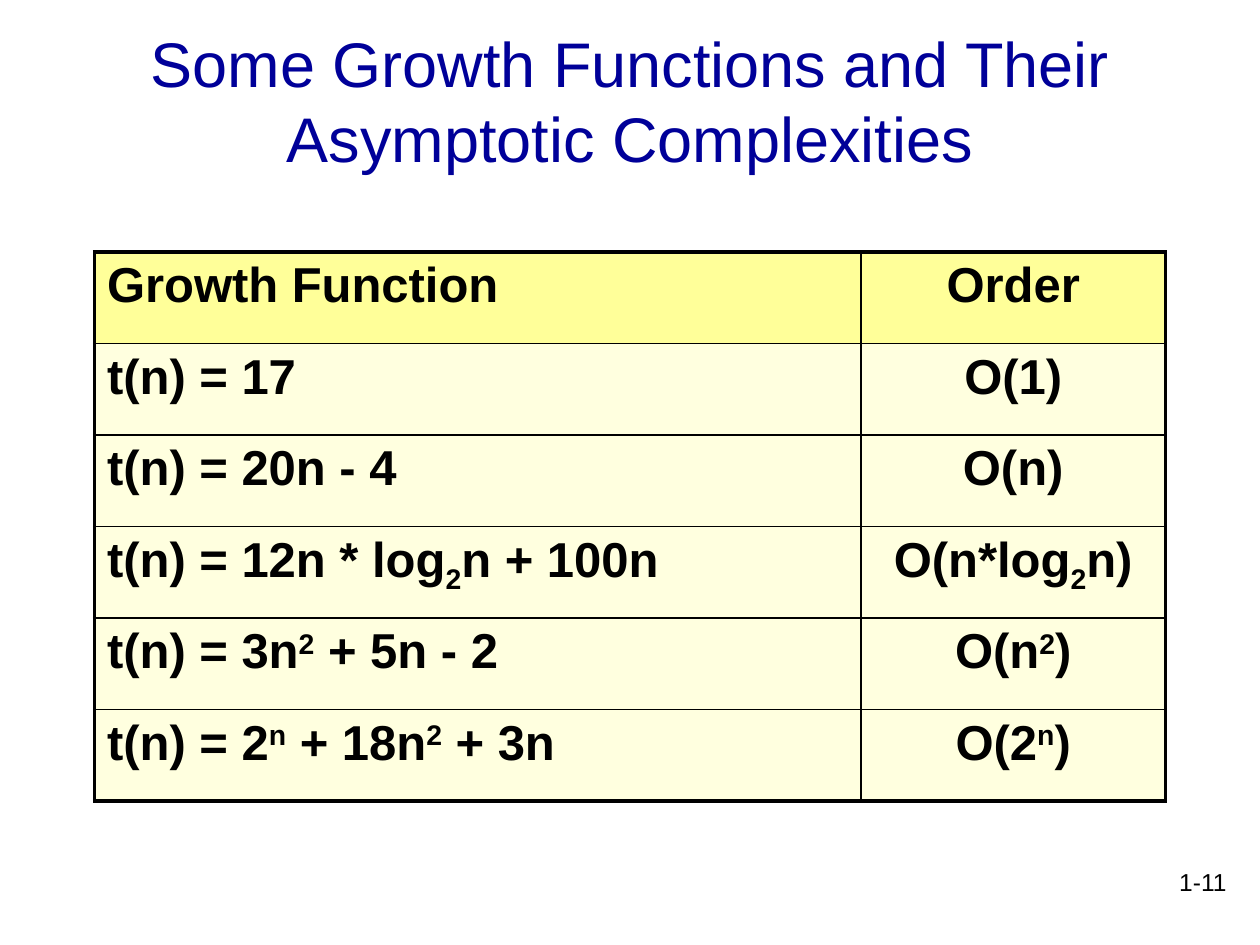
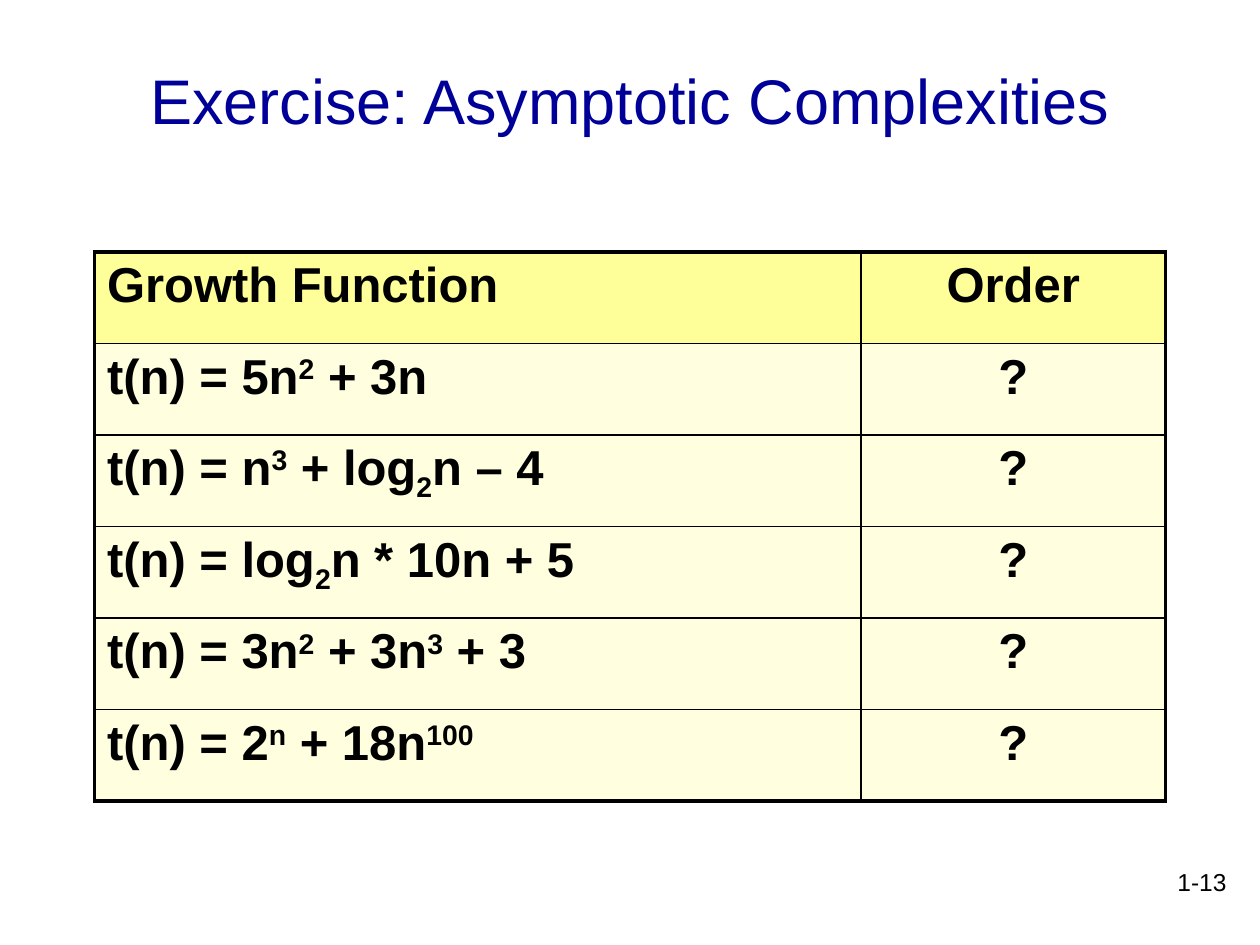
from dataclasses import dataclass
from typing import NamedTuple

from lxml import etree
from pptx import Presentation
from pptx.dml.color import RGBColor
from pptx.enum.text import MSO_ANCHOR, MSO_AUTO_SIZE, PP_ALIGN
from pptx.oxml.ns import qn
from pptx.util import Inches, Pt

LEFT, CENTER, RIGHT = PP_ALIGN.LEFT, PP_ALIGN.CENTER, PP_ALIGN.RIGHT
MIDDLE = MSO_ANCHOR.MIDDLE
NO_AUTOFIT = MSO_AUTO_SIZE.NONE

PAGE_COLUMNS, PAGE_ROWS = 120, 90
UNIT = Inches(10) / PAGE_COLUMNS
TITLE_ONLY = 5
BASELINES = {"^": "30000", "_": "-25000"}


class Area(NamedTuple):
    """A rectangle counted in columns and rows of the page grid."""
    column: float
    row: float
    columns: float
    rows: float

    def lengths(self) -> list[int]:
        return [round(count * UNIT) for count in self]


class TextStyle(NamedTuple):
    size: float
    color: str
    align: PP_ALIGN
    bold: bool = False


@dataclass(frozen=True)
class Theme:
    font: str = "Arial"
    ink: str = "000000"
    title_color: str = "000099"
    header_fill: str = "FFFF99"
    body_fill: str = "FFFFDF"
    title_size: float = 36
    table_size: float = 28
    number_size: float = 14
    outer_line: float = 2.25
    inner_line: float = 1
    space_before: str = "20000"


@dataclass(frozen=True)
class ComplexitySlide:
    title: str
    number: str
    rows: list[tuple[str, str]]


THEME = Theme()
TITLE_AREA = Area(9, 2, 102, 15)
TABLE_AREA = Area(9, 24, 102, 52.32)
NUMBER_AREA = Area(93, 82, 25, 6)
TABLE_COLUMNS = (73, 29)
TABLE_ALIGNS = (LEFT, CENTER)
HEADER = ("Growth Function", "Order")

# Pieces between bars that start with ^ or _ are raised or lowered.
SLIDES = [
    ComplexitySlide("Some Growth Functions and Their Asymptotic Complexities", "1-11", [
        ("t(n) = 17", "O(1)"),
        ("t(n) = 20n - 4", "O(n)"),
        ("t(n) = 12n * log|_2|n + 100n", "O(n*log|_2|n)"),
        ("t(n) = 3n|^2| + 5n - 2", "O(n|^2|)"),
        ("t(n) = 2|^n| + 18n|^2| + 3n", "O(2|^n|)"),
    ]),
    ComplexitySlide("Exercise: Asymptotic Complexities", "1-13", [
        ("t(n) = 5n|^2| + 3n", "?"),
        ("t(n) = n|^3| + log|_2|n – 4", "?"),
        ("t(n) = log|_2|n * 10n + 5", "?"),
        ("t(n) = 3n|^2| + 3n|^3| + 3", "?"),
        ("t(n) = 2|^n| + 18n|^100", "?"),
    ]),
]


def write_formula(para, formula: str, style: TextStyle) -> None:
    para.alignment = style.align
    para.font.name = THEME.font
    para.font.size = Pt(style.size)
    para.font.bold = style.bold
    para.font.color.rgb = RGBColor.from_string(style.color)
    for piece in filter(None, formula.split("|")):
        baseline = BASELINES.get(piece[0])
        span = para.add_run()
        span.text = piece[1:] if baseline else piece
        if baseline:
            span.font._element.set("baseline", baseline)


def set_space_before(para, percent: str) -> None:
    properties = para._p.get_or_add_pPr()
    spacing = etree.Element(qn("a:spcBef"))
    etree.SubElement(spacing, qn("a:spcPct"), val=percent)
    properties.insert(0, spacing)


def set_borders(cell, edges: dict[str, bool]) -> None:
    """Draw each side of a cell, thicker where it lies on the table's edge."""
    properties = cell._tc.get_or_add_tcPr()
    for side, is_outer in edges.items():
        width = Pt(THEME.outer_line if is_outer else THEME.inner_line)
        line = etree.SubElement(properties, qn(f"a:ln{side}"), w=str(width))
        fill = etree.SubElement(line, qn("a:solidFill"))
        etree.SubElement(fill, qn("a:srgbClr"), val=THEME.ink)


def add_title(page, title: str) -> None:
    box = page.shapes.title
    box.left, box.top, box.width, box.height = TITLE_AREA.lengths()
    frame = box.text_frame
    frame.auto_size = NO_AUTOFIT
    frame.word_wrap = True
    frame.vertical_anchor = MIDDLE
    write_formula(frame.paragraphs[0], title,
                  TextStyle(THEME.title_size, THEME.title_color, CENTER))


def add_page_number(page, number: str) -> None:
    frame = page.shapes.add_textbox(*NUMBER_AREA.lengths()).text_frame
    frame.word_wrap = True
    write_formula(frame.paragraphs[0], number,
                  TextStyle(THEME.number_size, THEME.ink, RIGHT))


def add_growth_table(page, rows: list[tuple[str, str]]) -> None:
    lines = [HEADER, *rows]
    last_row, last_column = len(lines) - 1, len(HEADER) - 1
    table = page.shapes.add_table(len(lines), len(HEADER), *TABLE_AREA.lengths()).table
    table.first_row = table.horz_banding = False
    for column, share in zip(table.columns, TABLE_COLUMNS):
        column.width = round(share * UNIT)
    for row, line in enumerate(lines):
        fill = THEME.body_fill if row else THEME.header_fill
        for column, formula in enumerate(line):
            cell = table.cell(row, column)
            set_borders(cell, {"L": column == 0, "R": column == last_column,
                               "T": row == 0, "B": row == last_row})
            cell.fill.solid()
            cell.fill.fore_color.rgb = RGBColor.from_string(fill)
            para = cell.text_frame.paragraphs[0]
            write_formula(para, formula, TextStyle(
                THEME.table_size, THEME.ink, TABLE_ALIGNS[column], bold=True))
            set_space_before(para, THEME.space_before)


def main() -> None:
    deck = Presentation()
    deck.slide_width = round(PAGE_COLUMNS * UNIT)
    deck.slide_height = round(PAGE_ROWS * UNIT)
    for content in SLIDES:
        page = deck.slides.add_slide(deck.slide_layouts[TITLE_ONLY])
        add_page_number(page, content.number)
        add_title(page, content.title)
        add_growth_table(page, content.rows)
    deck.save("out.pptx")


if __name__ == "__main__":
    main()
